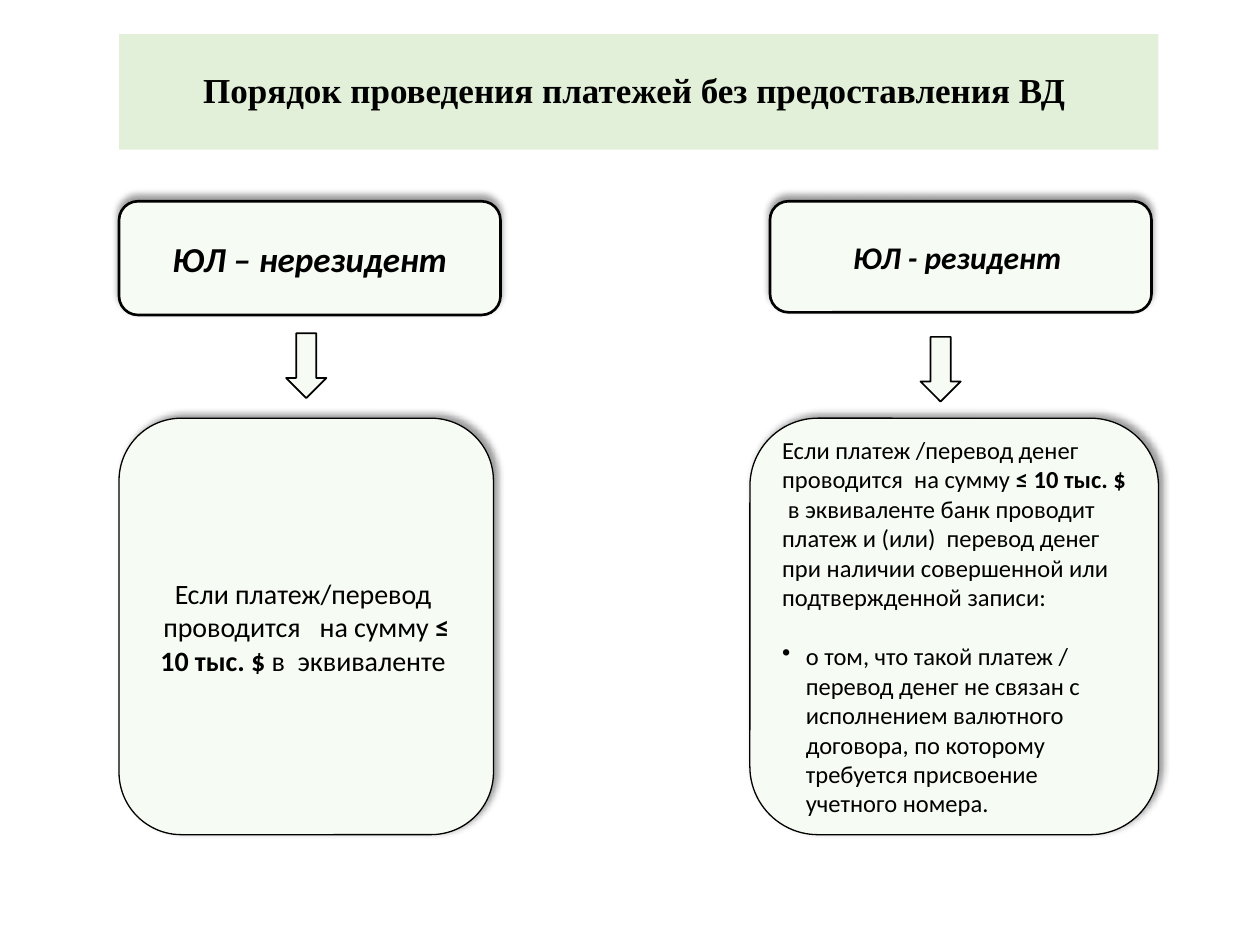
import pptx
import pptx.util
import pptx.dml.color
import pptx.enum.shapes
import pptx.enum.text
import pptx.oxml
import pptx.oxml.ns

Pt = pptx.util.Pt
SHAPE = pptx.enum.shapes.MSO_SHAPE
ALIGN = pptx.enum.text.PP_ALIGN
MIDDLE = pptx.enum.text.MSO_ANCHOR.MIDDLE
INK, PALE, GREEN = "000000", "F6FBF3", "E2F0D9"


def rgb(value):
    """Turn a hex string into a colour."""
    return pptx.dml.color.RGBColor.from_string(value)


def add_xml(parent, xml):
    """Append a DrawingML fragment to an element."""
    ns = pptx.oxml.ns.nsdecls("a")
    parent.append(pptx.oxml.parse_xml(xml.replace(">", f" {ns}>", 1)))


def set_attrs(obj, values):
    """Set attributes from a dict."""
    for name, value in values.items():
        setattr(obj, name, value)


def add_run(p, text, size, **fmt):
    """Add a formatted run to a paragraph."""
    r = p.add_run()
    r.text = text
    set_attrs(r.font, {"name": "Calibri", "size": Pt(size), **fmt})
    r.font.color.rgb = rgb(INK)


def add_bullet(p, indent):
    """Give a paragraph a hanging round bullet."""
    pPr = p._p.get_or_add_pPr()
    pPr.set("marL", str(Pt(indent)))
    pPr.set("indent", str(-Pt(indent)))
    add_xml(pPr, '<a:buFont><a:dummy/></a:buFont>'.replace(
        '<a:buFont><a:dummy/></a:buFont>', '<a:buChar char="•"></a:buChar>'))


def add_box(s, kind, box, weight, shadow_dir=None):
    """Add a pale outlined shape, with a shadow if a direction is given."""
    sp = s.shapes.add_shape(kind, *map(Pt, box))
    sp.shadow.inherit = False
    sp.fill.solid()
    sp.fill.fore_color.rgb = rgb(PALE)
    sp.line.color.rgb = rgb(INK)
    sp.line.width = Pt(weight)
    if shadow_dir is not None:
        effects = sp._element.spPr.find(pptx.oxml.ns.qn("a:effectLst"))
        add_xml(effects, f'<a:outerShdw blurRad="{Pt(4)}" dist="{Pt(3)}" '
                f'dir="{shadow_dir * 60000}" rotWithShape="0">'
                f'<a:srgbClr val="{INK}"><a:alpha val="40000"/></a:srgbClr></a:outerShdw>')
    return sp


def add_title(s, box, text):
    """Format the title placeholder as a green band."""
    sp = s.shapes.title
    set_attrs(sp, dict(zip(("left", "top", "width", "height"), map(Pt, box))))
    sp.fill.solid()
    sp.fill.fore_color.rgb = rgb(GREEN)
    tf = sp.text_frame
    set_attrs(tf, {"margin_left": 0, "margin_right": 0, "margin_top": 0,
                   "margin_bottom": 0, "vertical_anchor": MIDDLE, "word_wrap": True})
    p = tf.paragraphs[0]
    set_attrs(p, {"alignment": ALIGN.CENTER, "line_spacing": 0.9})
    add_run(p, text, 20, name="Times New Roman", bold=True)


def add_header(s, box, text, size):
    """Add a bold italic header box."""
    tf = add_box(s, SHAPE.ROUNDED_RECTANGLE, box, 1.5, 270).text_frame
    set_attrs(tf, {"vertical_anchor": MIDDLE, "word_wrap": False})
    p = tf.paragraphs[0]
    p.alignment = ALIGN.CENTER
    add_run(p, text, size, bold=True, italic=True)


def add_body(s, box, paragraphs, size, align, bullet_gap=0):
    """Add a rule box; paragraphs alternate plain and bold runs."""
    tf = add_box(s, SHAPE.ROUNDED_RECTANGLE, box, 0.75, 315).text_frame
    set_attrs(tf, {"vertical_anchor": MIDDLE, "word_wrap": True})
    for i, runs in enumerate(paragraphs):
        p = tf.add_paragraph() if i else tf.paragraphs[0]
        p.alignment = align
        if i and bullet_gap:
            p.space_before = Pt(bullet_gap)
            add_bullet(p, 13.5)
        for j, text in enumerate(runs):
            add_run(p, text, size, bold=j % 2 == 1)


def main():
    """Build the slide."""
    prs = pptx.Presentation()
    set_attrs(prs, {"slide_width": Pt(720), "slide_height": Pt(540)})
    s = prs.slides.add_slide(prs.slide_layouts[5])
    add_title(s, (68, 19.5, 594, 66), "Порядок проведения платежей без предоставления ВД ")

    add_header(s, (68, 115, 218, 65), "ЮЛ – нерезидент", 20)
    add_header(s, (440, 115, 218, 63.5), "ЮЛ - резидент ", 18)
    add_body(s, (68, 239, 214, 238), [
        ["Если платеж/перевод "],
        ["проводится   на сумму ", "≤ 10 тыс. $ ", "в  эквиваленте "],
    ], 16, ALIGN.CENTER)
    add_body(s, (428.5, 239, 233.5, 238), [
        ["Если платеж /перевод денег проводится  на сумму ", "≤ 10 тыс. $  ",
         "в эквиваленте банк проводит платеж и (или)  перевод денег "
         "при наличии совершенной или подтвержденной записи:"],
        ["о том, что такой платеж /  перевод денег не связан с исполнением валютного "
         "договора, по которому требуется присвоение учетного номера."],
    ], 14, ALIGN.LEFT, bullet_gap=17)
    for left, top in ((163.5, 190.5), (526, 192.5)):
        add_box(s, SHAPE.DOWN_ARROW, (left, top, 23, 37), 1)
    prs.save("out.pptx")


if __name__ == "__main__":
    main()
